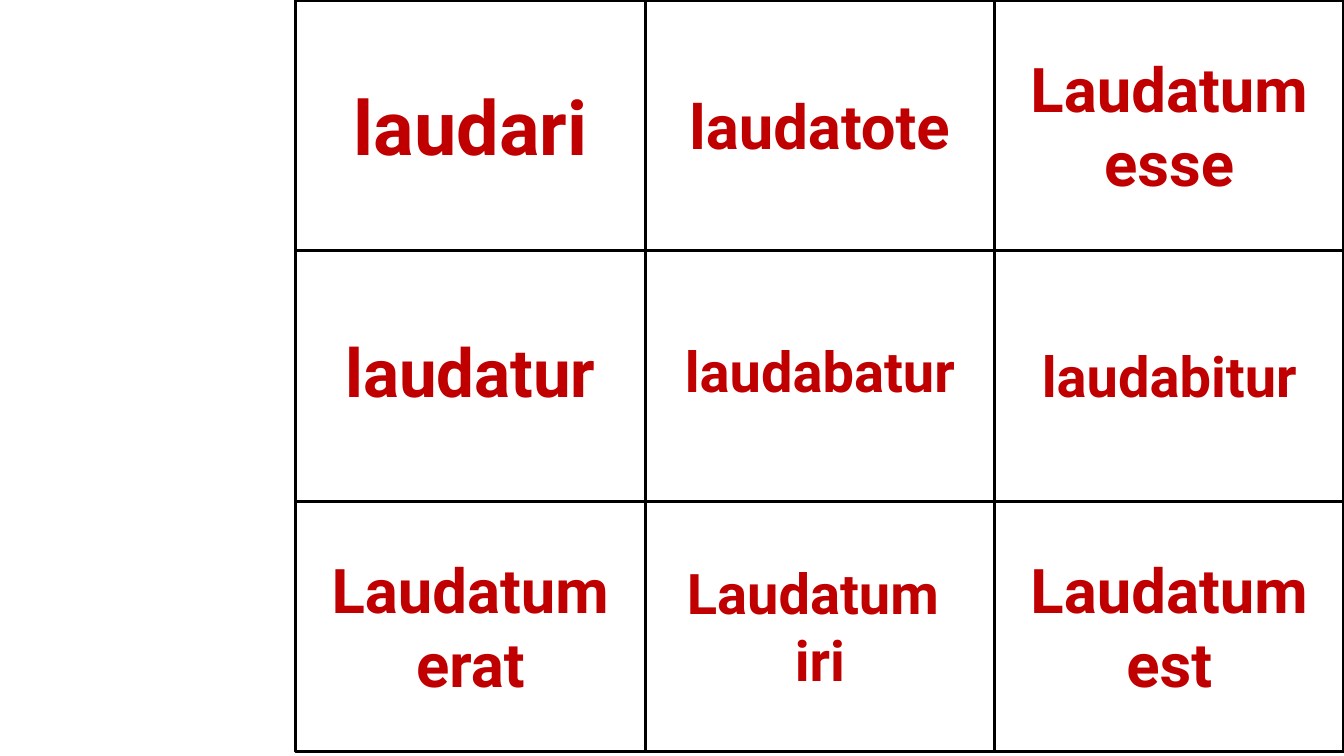
import pptx
import pptx.dml.color
import pptx.enum.shapes
import pptx.enum.text
import pptx.util
from lxml import etree
from pptx.oxml.ns import qn

COLORS = {"border": "000000", "word": "C00000"}
FONT = "Roboto"
SLIDE_W, SLIDE_H = 13.33, 7.5
GRID_LEFT = 0.22 * SLIDE_W
CARD_W, CARD_H = 0.26 * SLIDE_W, 0.3315 * SLIDE_H
INSET = 0.1
LINES_PER_INCH = 59.5  # points of type size that fill one inch of line height

# Each card: paragraphs, type size, lines shown, vertical shift from the centre
CARDS = [
    [(["laudari"], 54, 1, 0), (["laudatote"], 44, 1, 0),
     (["Laudatum esse"], 44, 2, 0)],
    [(["laudatur"], 48, 1, -0.05), (["laudabatur"], 40, 1, -0.05),
     (["laudabitur"], 40, 1, 0)],
    [(["Laudatum erat"], 44, 2, 0), (["Laudatum ", "iri"], 40, 2, 0),
     (["Laudatum est"], 44, 2, 0)],
]


def rgb(name):
    return pptx.dml.color.RGBColor.from_string(COLORS[name])


def inches(*lengths):
    return [pptx.util.Inches(length) for length in lengths]


def outline_run(r, name, width):
    """Give the letters of a run a solid outline."""
    ln = etree.Element(qn("a:ln"), w=str(pptx.util.Pt(width)))
    fill = etree.SubElement(ln, qn("a:solidFill"))
    etree.SubElement(fill, qn("a:srgbClr"), val=COLORS[name])
    r.font._element.insert(0, ln)


def add_border(s, left, top, width, height):
    sp = s.shapes.add_shape(pptx.enum.shapes.MSO_SHAPE.RECTANGLE,
                            *inches(left, top, width, height))
    sp.shadow.inherit = False
    sp.fill.background()
    sp.line.color.rgb = rgb("border")
    sp.line.width = pptx.util.Pt(2.25)


def add_word(s, left, top, width, height, card):
    paragraphs, size, lines, shift = card
    text_h = INSET + lines * size / LINES_PER_INCH
    text_top = top + (height - text_h) / 2 + shift
    sp = s.shapes.add_textbox(*inches(left, text_top, width, text_h))
    tf = sp.text_frame
    tf.word_wrap = True
    tf.auto_size = pptx.enum.text.MSO_AUTO_SIZE.SHAPE_TO_FIT_TEXT
    tf.text = "\n".join(paragraphs)
    for p in tf.paragraphs:
        p.alignment = pptx.enum.text.PP_ALIGN.CENTER
        for r in p.runs:
            r.font.name = FONT
            r.font.size = pptx.util.Pt(size)
            r.font.bold = True
            r.font.color.rgb = rgb("word")
            outline_run(r, "word", 1.75)


def add_card_grid(s, left, top):
    cells = [((left + col * CARD_W, top + row * CARD_H, CARD_W, CARD_H), card)
             for row, cards in enumerate(CARDS)
             for col, card in enumerate(cards)]
    for box, _ in cells:
        add_border(s, *box)
    for box, card in cells:
        add_word(s, *box, card)


def main():
    prs = pptx.Presentation()
    prs.slide_width, prs.slide_height = inches(SLIDE_W, SLIDE_H)
    s = prs.slides.add_slide(prs.slide_layouts[6])
    add_card_grid(s, GRID_LEFT, 0)
    prs.save("out.pptx")


if __name__ == "__main__":
    main()
